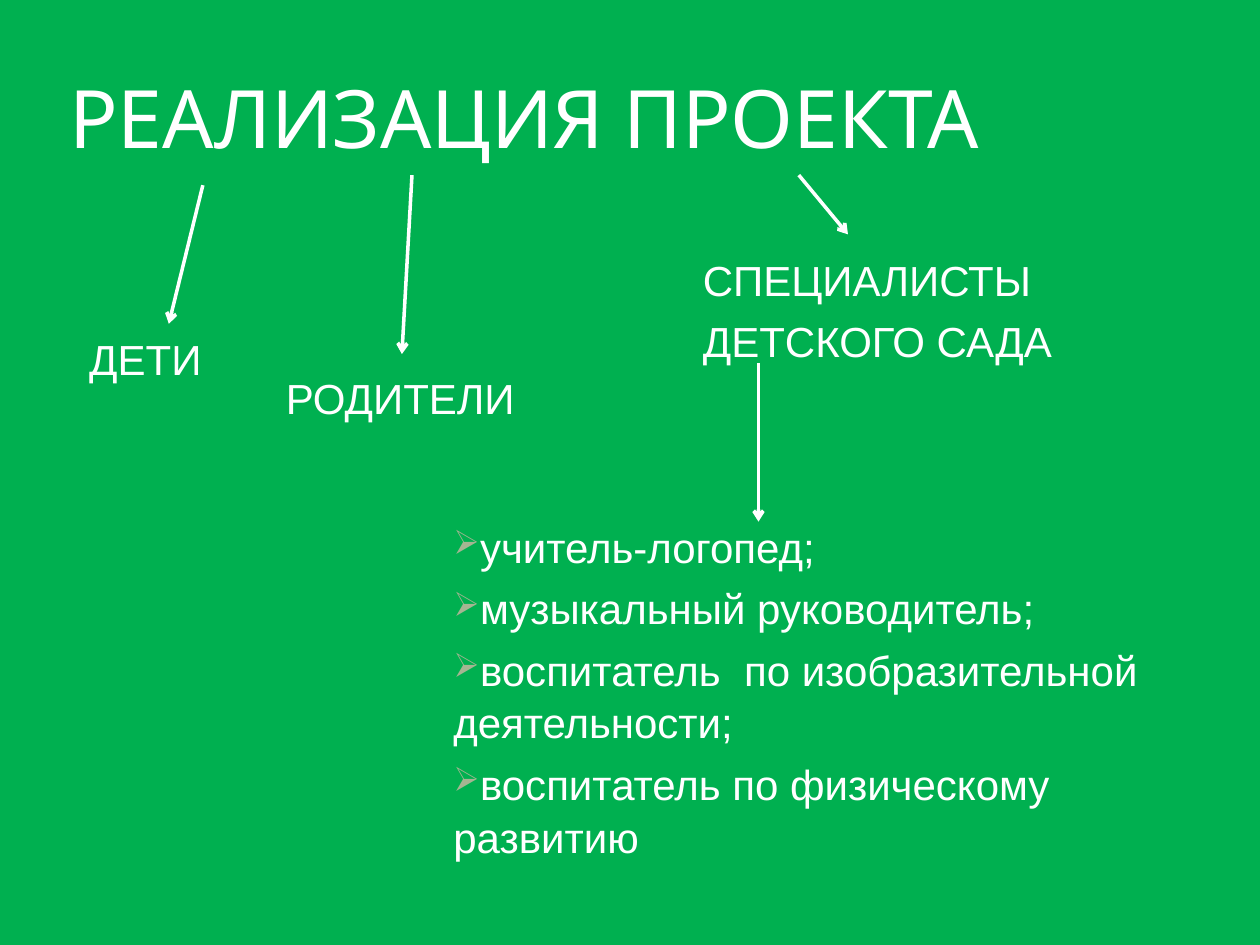
from lxml import etree
from pptx import Presentation
from pptx.dml.color import RGBColor
from pptx.enum.shapes import MSO_CONNECTOR
from pptx.enum.text import MSO_ANCHOR
from pptx.oxml.ns import qn
from pptx.util import Inches, Pt

GREEN = RGBColor(0x00, 0xB0, 0x50)
WHITE = RGBColor(0xFF, 0xFF, 0xFF)
SAGE = RGBColor(0xA5, 0xB5, 0x92)
LINE = MSO_CONNECTOR.STRAIGHT
TOP, MIDDLE = MSO_ANCHOR.TOP, MSO_ANCHOR.MIDDLE

# The slide is a grid of 10 columns by 7.5 rows of square cells
COLS, ROWS = 10, 7.5
WIDTH, HEIGHT = Inches(10), Inches(7.5)
CELL = WIDTH // COLS

HEAD = {"name": "Karla", "size": Pt(46)}
BODY = {"name": "Arial", "size": Pt(24)}


def grid(*cells):
    return [round(n * CELL) for n in cells]


def add_mark(para):
    """Give a paragraph a pale arrow bullet."""
    props = para._p.get_or_add_pPr()
    color = etree.SubElement(props, qn("a:buClr"))
    etree.SubElement(color, qn("a:srgbClr"), val=str(SAGE))
    etree.SubElement(props, qn("a:buSzPct"), val="80000")
    etree.SubElement(props, qn("a:buChar"), char="➢")


def add_text(slide, box, lines, font, anchor=TOP, inset=0.1, indent=0,
             spacing=1.05, marked=False):
    frame = slide.shapes.add_textbox(*grid(*box)).text_frame
    side, edge = grid(inset, 0.06)
    form = {"word_wrap": True, "vertical_anchor": anchor,
            "margin_left": side, "margin_right": side,
            "margin_top": edge, "margin_bottom": edge}
    for key, value in form.items():
        setattr(frame, key, value)
    for i, line in enumerate(lines):
        para = frame.paragraphs[0] if i == 0 else frame.add_paragraph()
        para.line_spacing = spacing
        para.space_before = Pt(4.8 if i else 0)
        props = para._p.get_or_add_pPr()
        props.set("marL", str(grid(indent)[0]))
        props.set("indent", "0")
        if marked:
            add_mark(para)
        run = para.add_run()
        run.text = line
        for key, value in font.items():
            setattr(run.font, key, value)
        run.font.color.rgb = WHITE


def add_arrow(slide, box, start, end):
    """Draw an arrow whose ends are offsets from the corner of the box."""
    left, top = box[:2]
    ends = grid(left + start[0], top + start[1], left + end[0], top + end[1])
    arrow = slide.shapes.add_connector(LINE, *ends)
    arrow.line.color.rgb = WHITE
    arrow.line.width = Pt(2)
    etree.SubElement(arrow.line._get_or_add_ln(), qn("a:tailEnd"), type="arrow")
    etree.SubElement(arrow._element.spPr, qn("a:effectLst"))


def add_title(slide, box):
    add_text(slide, box, ["РЕАЛИЗАЦИЯ ПРОЕКТА"], HEAD, MIDDLE,
             inset=0.05, spacing=1)


def add_branch(slide, box, lines, start, end, **form):
    """Place a label or list and the arrow that leads to it."""
    add_text(slide, box, lines, BODY, **form)
    add_arrow(slide, box, start, end)


def main():
    deck = Presentation()
    deck.slide_width, deck.slide_height = WIDTH, HEIGHT
    slide = deck.slides.add_slide(deck.slide_layouts[6])
    fill = slide.background.fill
    fill.solid()
    fill.fore_color.rgb = GREEN

    add_title(slide, (0.5, 0.3, COLS - 1, 1.25))

    # Those who take part
    add_branch(slide, (4.92, 1.94, 4.42, 0.92),
               ["СПЕЦИАЛИСТЫ", "ДЕТСКОГО САДА"],
               (1.42, -0.55), (1.81, -0.08), indent=0.56)
    add_branch(slide, (0.2, 2.57, 2.28, 1.57), ["ДЕТИ"],
               (1.41, -1.1), (1.14, 0), indent=0.41)
    add_branch(slide, (2.17, 2.88, 2.68, 1.15), ["РОДИТЕЛИ"],
               (1.1, -1.49), (1.02, -0.07))

    # Staff of the kindergarten
    add_branch(slide, (3.5, 4.06, 6, 2.85),
               ["учитель-логопед;",
                "музыкальный руководитель;",
                "воспитатель  по изобразительной деятельности;",
                "воспитатель по физическому развитию"],
               (2.52, -1.18), (2.52, 0.08), marked=True)

    deck.save("out.pptx")


if __name__ == "__main__":
    main()
